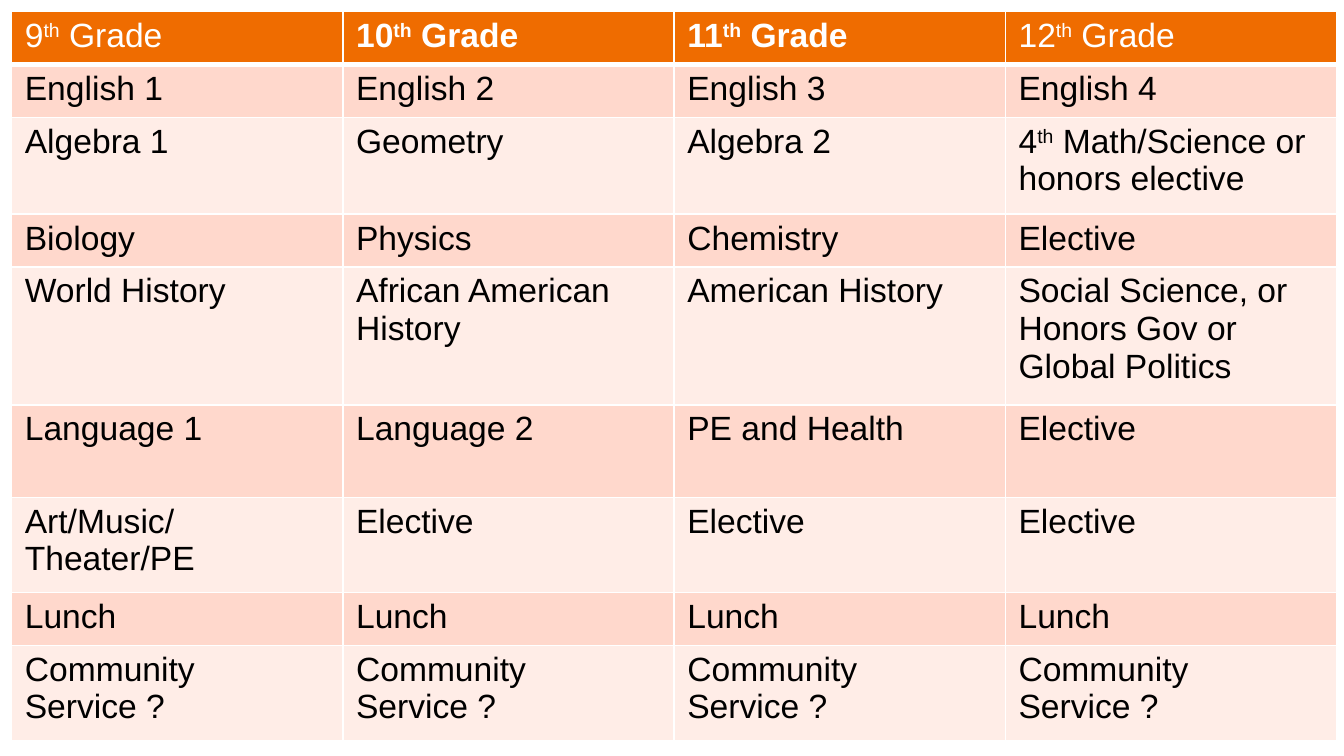
from pptx import Presentation
from pptx import util as u
from pptx.dml.color import RGBColor
from pptx.oxml.ns import qn
from lxml import etree

WHITE, BLACK = "FFFFFF", "000000"
HEADER_FILL = "EF6C00"
BAND_FILLS = ("FFEDE7", "FFD8CC")
COLUMN_WIDTH = 6.26
ROW_HEIGHTS = (1, 1, 1.83, 1, 2.6, 1.75, 1.8, 1, 1.8)

# Text between carets is superscript.
COURSES = (
    ("9^th^ Grade", "10^th^ Grade", "11^th^ Grade", "12^th^ Grade"),
    ("English 1", "English 2", "English 3", "English 4"),
    ("Algebra 1", "Geometry", "Algebra 2",
     "4^th^ Math/Science or honors elective"),
    ("Biology", "Physics", "Chemistry", "Elective"),
    ("World History", "African American History", "American History",
     "Social Science, or Honors Gov or Global Politics"),
    ("Language 1", "Language 2", "PE and Health", "Elective"),
    ("Art/Music/\nTheater/PE",) + ("Elective",) * 3,
    ("Lunch",) * 4,
    ("Community Service ?",) * 4,
)
BOLD_HEADERS = (1, 2)


def color(hex_code):
    return RGBColor.from_string(hex_code)


def set_border(cell, side, points):
    properties = cell._tc.get_or_add_tcPr()
    line = etree.SubElement(properties, qn(f"a:ln{side}"), w=str(u.Pt(points)))
    fill = etree.SubElement(line, qn("a:solidFill"))
    etree.SubElement(fill, qn("a:srgbClr"), val=WHITE)


def write_text(cell, content, font_color, bold):
    """Write one paragraph per line, raising the parts between carets."""
    frame = cell.text_frame
    frame.text = content.replace("^", "")
    for paragraph, line in zip(frame.paragraphs, content.split("\n")):
        paragraph.text = ""
        for position, part in enumerate(line.split("^")):
            run = paragraph.add_run()
            run.text = part
            run.font.name = "Arial"
            run.font.size = u.Pt(18)
            run.font.bold = bold
            run.font.color.rgb = color(font_color)
            if position % 2:
                run.font._element.set("baseline", "30000")


def format_cell(cell, row):
    cell.margin_left = cell.margin_right = u.Cm(0.25)
    cell.margin_top = cell.margin_bottom = u.Cm(0.1)
    for side in "LRTB":
        below_header = (row, side) in ((0, "B"), (1, "T"))
        set_border(cell, side, 3 if below_header else 1)
    cell.fill.solid()
    cell.fill.fore_color.rgb = color(BAND_FILLS[row % 2] if row else HEADER_FILL)


def add_course_table(slide):
    columns = len(COURSES[0])
    table = slide.shapes.add_table(
        len(COURSES), columns, u.Cm(0.22), u.Cm(0.22),
        u.Cm(COLUMN_WIDTH * columns), u.Cm(sum(ROW_HEIGHTS))).table
    for column in table.columns:
        column.width = u.Cm(COLUMN_WIDTH)
    for row, (height, courses) in enumerate(zip(ROW_HEIGHTS, COURSES)):
        table.rows[row].height = u.Cm(height)
        for column, course in enumerate(courses):
            cell = table.cell(row, column)
            format_cell(cell, row)
            write_text(cell, course, BLACK if row else WHITE,
                       row == 0 and column in BOLD_HEADERS)


def main():
    presentation = Presentation()
    presentation.slide_width = u.Cm(25.4)
    presentation.slide_height = u.Cm(14.29)
    slide = presentation.slides.add_slide(presentation.slide_layouts[6])
    add_course_table(slide)
    presentation.save("out.pptx")


if __name__ == "__main__":
    main()
